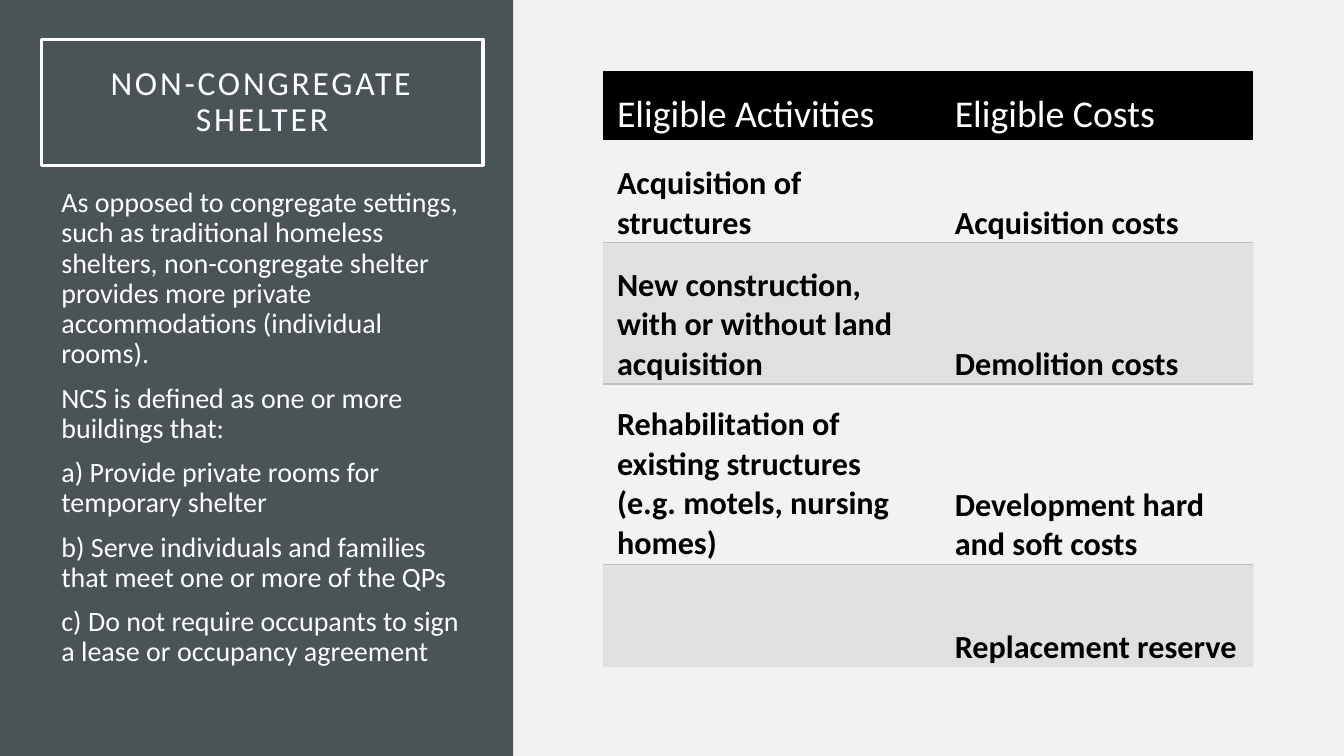
"""Build the non-congregate shelter slide: definition panel and eligibility table."""
from lxml.etree import SubElement
from pptx import Presentation
from pptx.dml.color import RGBColor
from pptx.enum.shapes import MSO_SHAPE
from pptx.enum.text import MSO_ANCHOR, MSO_AUTO_SIZE, PP_ALIGN
from pptx.oxml import parse_xml
from pptx.oxml.ns import nsdecls, qn
from pptx.util import Inches, Pt

COLORS = {
    "background": "F2F2F2",
    "panel": "4A5356",
    "white": "FFFFFF",
    "black": "000000",
    "band": "BFBFBF",
}
PLAIN_TABLE_STYLE = "{2D5ABB26-0587-4C30-8999-92F81FD0307C}"
DEFINITION = [
    "As opposed to congregate settings, such as traditional homeless shelters, "
    "non-congregate shelter provides more private accommodations (individual rooms).",
    "NCS is defined as one or more buildings that:",
    "a) Provide private rooms for temporary shelter",
    "b) Serve individuals and families that meet one or more of the QPs",
    "c) Do not require occupants to sign a lease or occupancy agreement",
]
ROWS = [
    ("Eligible Activities", "Eligible Costs"),
    ("Acquisition of structures", "Acquisition costs"),
    ("New construction, with or without land acquisition", "Demolition costs"),
    ("Rehabilitation of existing structures (e.g. motels, nursing homes)",
     "Development hard and soft costs"),
    ("", "Replacement reserve"),
]
COLUMN_WIDTHS = [3.35, 3.1]
ROW_HEIGHTS = [0.69, 1.02, 1.4, 1.79, 1.02]


def color(name):
    return RGBColor.from_string(COLORS[name])


def write(paragraph, text, size, color_name="white", bold=False, spacing=None, before=0):
    paragraph.line_spacing = spacing
    paragraph.space_before = Pt(before)
    run = paragraph.add_run()
    run.text = text
    run.font.name = "Calibri"
    run.font.size = Pt(size)
    run.font.bold = bold
    run.font.color.rgb = color(color_name)
    return run


presentation = Presentation()
presentation.slide_width = Inches(13.33)
presentation.slide_height = Inches(7.5)
slide = presentation.slides.add_slide(presentation.slide_layouts[5])
slide.background.fill.solid()
slide.background.fill.fore_color.rgb = color("background")

panel = slide.shapes.add_shape(
    MSO_SHAPE.RECTANGLE, 0, 0, Inches(5.09), presentation.slide_height)
panel.shadow.inherit = False
panel.fill.solid()
panel.fill.fore_color.rgb = color("panel")
panel.line.fill.background()

title = slide.shapes.title
title.element.addprevious(panel.element)
title.left, title.top, title.width, title.height = map(Inches, (0.41, 0.39, 4.38, 1.25))
title.line.color.rgb = color("white")
title.line.width = Pt(2.5)
title_frame = title.text_frame
title_frame.auto_size = MSO_AUTO_SIZE.NONE
title_frame.word_wrap = True
title_frame.vertical_anchor = MSO_ANCHOR.MIDDLE
title_frame.margin_left = title_frame.margin_right = Inches(0.2)
title_frame.margin_top = title_frame.margin_bottom = Inches(0.2)
heading = title_frame.paragraphs[0]
heading.alignment = PP_ALIGN.CENTER
heading_run = write(heading, "NON-CONGREGATE SHELTER", 24, spacing=0.9)
heading_run.font.element.set("spc", "200") if hasattr(heading_run.font, "element") else \
    heading_run._r.get_or_add_rPr().set("spc", "200")

definition_box = slide.shapes.add_textbox(*map(Inches, (0.51, 1.82, 4.19, 5.24)))
definition_frame = definition_box.text_frame
definition_frame.word_wrap = True
for index, text in enumerate(DEFINITION):
    paragraph = definition_frame.add_paragraph() if index else definition_frame.paragraphs[0]
    write(paragraph, text, 20, spacing=0.9, before=10)

table = slide.shapes.add_table(
    len(ROWS), len(COLUMN_WIDTHS), Inches(5.98), Inches(0.7),
    Inches(sum(COLUMN_WIDTHS)), Inches(sum(ROW_HEIGHTS))).table
table.horz_banding = False
table._tbl.tblPr.find(qn("a:tableStyleId")).text = PLAIN_TABLE_STYLE
for column, width in zip(table.columns, COLUMN_WIDTHS):
    column.width = Inches(width)
for row, height in zip(table.rows, ROW_HEIGHTS):
    row.height = Inches(height)

for row_index, texts in enumerate(ROWS):
    is_header = row_index == 0
    is_band = row_index > 0 and row_index % 2 == 0
    for column_index, text in enumerate(texts):
        cell = table.cell(row_index, column_index)
        cell.margin_left = cell.margin_right = Inches(0.14)
        cell.margin_top, cell.margin_bottom = Inches(0.19), 0
        is_middle = is_header or (row_index, column_index) == (3, 0)
        cell.vertical_anchor = MSO_ANCHOR.MIDDLE if is_middle else MSO_ANCHOR.BOTTOM
        cell.fill.solid()
        if is_header:
            cell.fill.fore_color.rgb = color("black")
            write(cell.text_frame.paragraphs[0], text, 27)
            continue
        cell.fill.fore_color.rgb = color("band" if is_band else "background")
        properties = cell._tc.tcPr
        fill_color = properties.find(qn("a:solidFill")).find(qn("a:srgbClr"))
        SubElement(fill_color, qn("a:alpha"), val="35000" if is_band else "45000")
        side = "lnT" if is_band else "lnB"
        properties.insert(0, parse_xml(
            f'<a:{side} {nsdecls("a")} w="12700"><a:solidFill>'
            f'<a:srgbClr val="{COLORS["band"]}"/></a:solidFill></a:{side}>'))
        if text:
            write(cell.text_frame.paragraphs[0], text, 23, "black", bold=True)

presentation.save("out.pptx")
